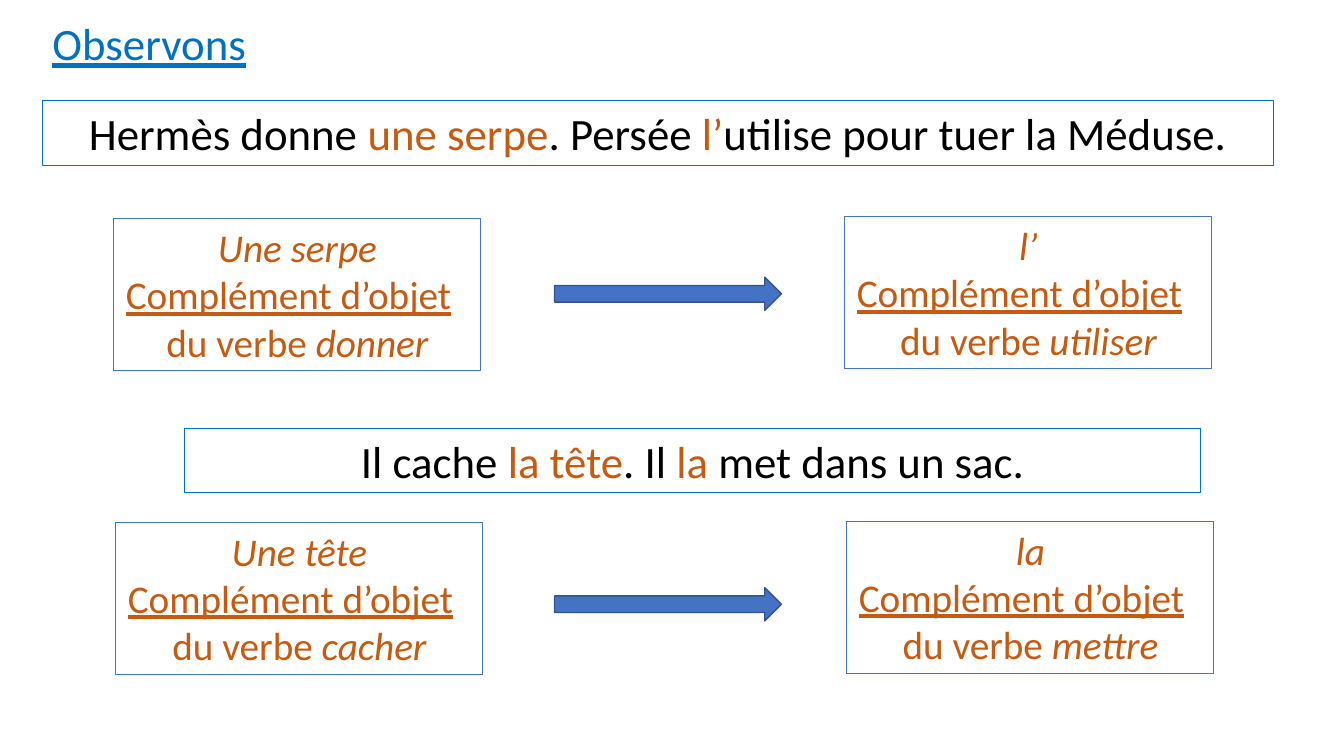
from dataclasses import dataclass

from pptx import Presentation
from pptx import util as u
from pptx.dml.color import RGBColor
from pptx.enum import shapes, text

PX = 9144  # EMU per px, 100 px to the inch


@dataclass(frozen=True)
class Theme:
    font: str = "Calibri"
    large: int = 32
    small: int = 28
    ink: str = "000000"
    title: str = "0070C0"
    accent: str = "C55A11"
    box_line: str = "4472C4"
    arrow_line: str = "325491"


T = Theme()


def rgb(color):
    return RGBColor.from_string(color)


def add_run(p, words, size, color, italic=False, underline=False):
    r = p.add_run()
    r.text = words
    f = r.font
    f.name, f.size, f.color.rgb = T.font, u.Pt(size), rgb(color)
    f.italic, f.underline = italic, underline


def add_shape(s, kind, at, line, width, fill=None):
    sp = s.shapes.add_shape(kind, *(v * PX for v in at))
    sp.shadow.inherit = False
    if fill:
        sp.fill.solid()
        sp.fill.fore_color.rgb = rgb(fill)
    else:
        sp.fill.background()
    sp.line.color.rgb = rgb(line)
    sp.line.width = u.Pt(width)
    return sp


def add_box(s, at, line):
    sp = add_shape(s, shapes.MSO_SHAPE.RECTANGLE, at, line, 0.75)
    tf = sp.text_frame
    tf.word_wrap = True
    tf.vertical_anchor = text.MSO_ANCHOR.TOP
    return tf


def add_title(s, words):
    sp = s.shapes.title
    sp.left, sp.top, sp.width, sp.height = (v * PX for v in (42, 11, 583, 64))
    tf = sp.text_frame
    tf.auto_size = text.MSO_AUTO_SIZE.NONE
    tf.vertical_anchor = text.MSO_ANCHOR.TOP
    p = tf.paragraphs[0]
    p.alignment = text.PP_ALIGN.LEFT
    add_run(p, words, T.large, T.title, underline=True)


def add_sentence(s, at, parts):
    """Parts alternate between plain and highlighted words."""
    p = add_box(s, at, T.title).paragraphs[0]
    p.alignment = text.PP_ALIGN.CENTER
    for i, words in enumerate(parts):
        add_run(p, words, T.large, T.accent if i % 2 else T.ink)


def add_complement(s, left, top, words, verb):
    tf = add_box(s, (left, top, 364, 151), T.box_line)
    lines = [
        [(words, True, False)],
        [("Complément d’objet", False, True)],
        [("du verbe ", False, False), (verb, True, False)],
    ]
    for i, runs in enumerate(lines):
        p = tf.add_paragraph() if i else tf.paragraphs[0]
        p.alignment = text.PP_ALIGN.CENTER
        for part, italic, underline in runs:
            add_run(p, part, T.small, T.accent, italic, underline)
    # The underlined line sits slightly left of centre
    label = tf.paragraphs[1]
    label.alignment = text.PP_ALIGN.LEFT
    label._p.get_or_add_pPr().set("marL", str(2 * PX))


def add_arrow(s, top):
    add_shape(s, shapes.MSO_SHAPE.RIGHT_ARROW, (550, top, 225, 33),
              T.arrow_line, 1, T.box_line)


def main():
    prs = Presentation()
    prs.slide_width, prs.slide_height = 1333 * PX, 750 * PX
    s = prs.slides.add_slide(prs.slide_layouts[5])
    add_title(s, "Observons")

    # Example sentences
    add_sentence(s, (42, 100, 1221, 64),
                 ["Hermès donne ", "une serpe", ". Persée ", "l’",
                  "utilise pour tuer la Méduse."])
    add_sentence(s, (183, 425, 1008, 64),
                 ["Il cache ", "la tête", ". Il ", "la ", "met dans un sac."])

    # Noun and the pronoun that replaces it
    add_complement(s, 113, 217, "Une serpe", "donner")
    add_arrow(s, 275)
    add_complement(s, 838, 215, "l’", "utiliser")

    add_complement(s, 115, 518, "Une tête", "cacher")
    add_arrow(s, 583)
    add_complement(s, 840, 517, "la", "mettre")

    prs.save("out.pptx")


if __name__ == "__main__":
    main()
